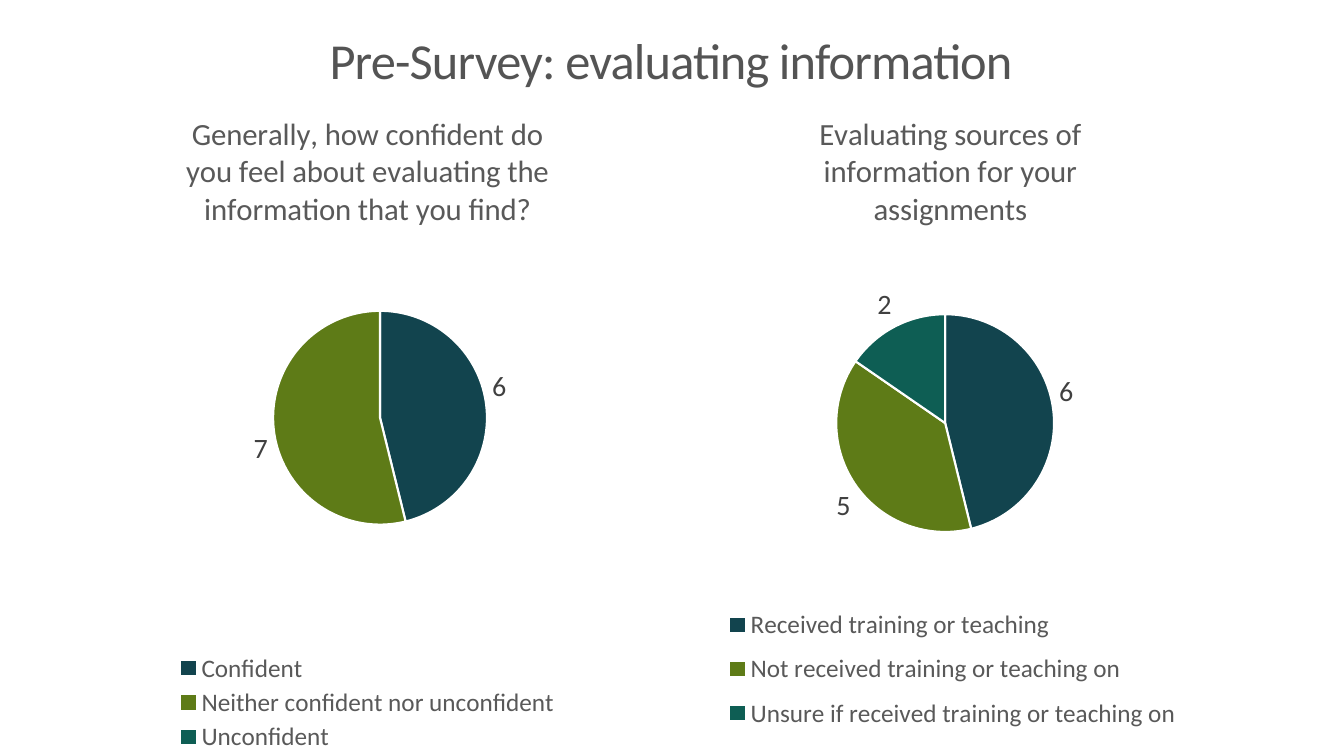
from lxml.etree import SubElement
from pptx import Presentation
from pptx.chart.data import CategoryChartData
from pptx.dml.color import RGBColor
from pptx.enum.chart import XL_CHART_TYPE, XL_LABEL_POSITION, XL_LEGEND_POSITION
from pptx.enum.text import MSO_ANCHOR, PP_ALIGN
from pptx.oxml.ns import qn
from pptx.util import Inches, Pt

FONT = "Calibri"
WHITE = RGBColor(0xFF, 0xFF, 0xFF)
TITLE_GRAY = RGBColor(0x54, 0x54, 0x54)
TEXT_GRAY = RGBColor(0x59, 0x59, 0x59)
LABEL_GRAY = RGBColor(0x40, 0x40, 0x40)
SLICE_COLORS = [
    RGBColor(0x12, 0x44, 0x4E),
    RGBColor(0x5E, 0x7B, 0x17),
    RGBColor(0x0E, 0x5E, 0x54),
]

# Plot and legend boxes are fractions of the chart: left, top, width, height.
SURVEYS = [
    {
        "question": "Generally, how confident do you feel about evaluating the information that you find?",
        "answers": ["Confident", "Neither confident nor unconfident", "Unconfident"],
        "counts": [6, 7, 0],
        "left": 1.15,
        "width": 4.99,
        "plot": (0.312, 0.334, 0.426, 0.32),
        "legend": (0.12, 0.84, 0.76, 0.16),
    },
    {
        "question": "Evaluating sources of information for your assignments",
        "answers": [
            "Received training or teaching",
            "Not received training or teaching on",
            "Unsure if received training or teaching on",
        ],
        "counts": [6, 5, 2],
        "left": 7.03,
        "width": 4.79,
        "plot": (0.264, 0.339, 0.451, 0.326),
        "legend": (0.03, 0.76, 0.95, 0.22),
    },
]


def style_font(font, size, color):
    font.name = FONT
    font.size = Pt(size)
    font.bold = False
    font.color.rgb = color


def set_layout(parent, position, box, inner=False):
    """Give a chart part a manual layout, as its child at the given position."""
    for old_layout in parent.findall(qn("c:layout")):
        parent.remove(old_layout)
    layout = SubElement(parent, qn("c:layout"))
    parent.insert(position, layout)
    manual = SubElement(layout, qn("c:manualLayout"))
    settings = [("layoutTarget", "inner")] if inner else []
    settings += [("xMode", "edge"), ("yMode", "edge")]
    settings += zip("xywh", box)
    for name, value in settings:
        SubElement(manual, qn(f"c:{name}")).set("val", str(value))


presentation = Presentation()
presentation.slide_width = Inches(13.33)
presentation.slide_height = Inches(7.5)
slide = presentation.slides.add_slide(presentation.slide_layouts[6])

title = slide.shapes.add_textbox(Inches(0.99), Inches(0), Inches(11.33), Inches(1.25))
title.text_frame.word_wrap = True
title.text_frame.vertical_anchor = MSO_ANCHOR.MIDDLE
paragraph = title.text_frame.paragraphs[0]
paragraph.alignment = PP_ALIGN.CENTER
paragraph.line_spacing = 0.9
run = paragraph.add_run()
run.text = "Pre-Survey: evaluating information"
style_font(run.font, 36, TITLE_GRAY)
title.element.xpath(".//a:rPr")[0].set("spc", "-60")

for survey in SURVEYS:
    data = CategoryChartData()
    data.categories = survey["answers"]
    data.add_series(survey["question"], survey["counts"])
    chart = slide.shapes.add_chart(
        XL_CHART_TYPE.PIE,
        Inches(survey["left"]), Inches(0.87), Inches(survey["width"]), Inches(6.63),
        data,
    ).chart
    chart.font.name = FONT
    chart.font.size = Pt(10)

    chart.has_title = True
    run = chart.chart_title.text_frame.paragraphs[0].add_run()
    run.text = survey["question"]
    style_font(run.font, 22, TEXT_GRAY)

    chart.has_legend = True
    chart.legend.position = XL_LEGEND_POSITION.BOTTOM
    chart.legend.include_in_layout = False
    style_font(chart.legend.font, 18, TEXT_GRAY)

    plot = chart.plots[0]
    plot.vary_by_categories = True
    for index, color in enumerate(SLICE_COLORS):
        slice_format = plot.series[0].points[index].format
        slice_format.fill.solid()
        slice_format.fill.fore_color.rgb = color
        slice_format.line.color.rgb = WHITE
        slice_format.line.width = Pt(1.5)

    labels = plot.series[0].data_labels
    labels.show_value = True
    labels.position = XL_LABEL_POSITION.OUTSIDE_END
    labels.number_format = "0;;"  # zero counts stay unlabelled
    labels.number_format_is_linked = False
    style_font(labels.font, 20, LABEL_GRAY)

    set_layout(chart.element.xpath(".//c:plotArea")[0], 0, survey["plot"], inner=True)
    set_layout(chart.element.xpath(".//c:legend")[0], 1, survey["legend"])

presentation.save("out.pptx")
